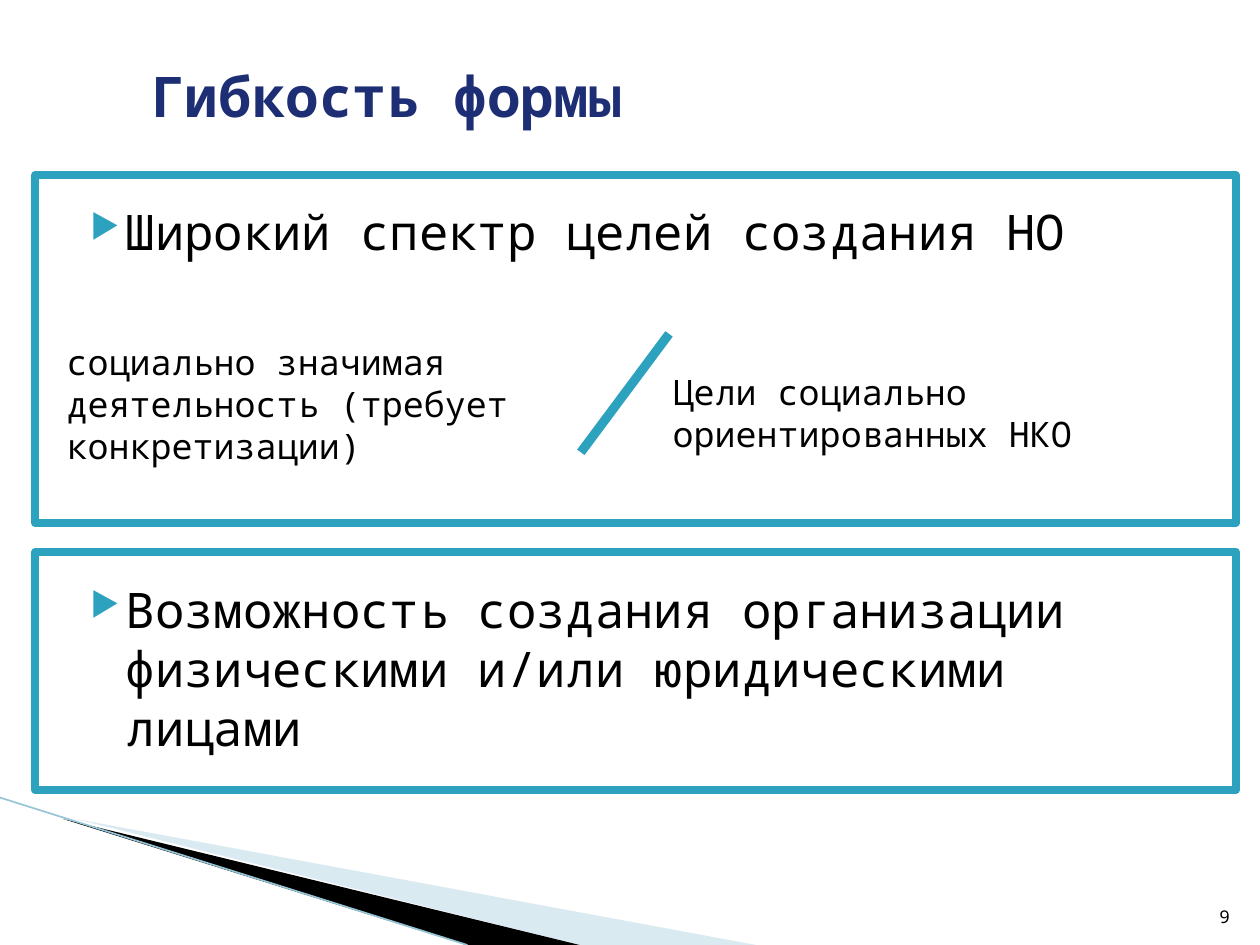
import dataclasses

import pptx
import pptx.dml.color
import pptx.enum.shapes
import pptx.enum.text
import pptx.oxml
import pptx.oxml.ns
import pptx.util

ANCHOR = pptx.enum.text.MSO_ANCHOR
ALIGN = pptx.enum.text.PP_ALIGN
CELL = pptx.util.Inches(0.1)  # grid of 100 columns by 75 rows
COLS, ROWS = 100, 75


@dataclasses.dataclass(frozen=True)
class Theme:
    font: str = "Noto Sans Mono"
    title: str = "1D2E75"
    text: str = "000000"
    paper: str = "FFFFFF"
    accent: str = "2DA2BF"
    pale: str = "A0CBDC"
    edge: str = "97C5D8"
    head: float = 32
    point: float = 28
    note: float = 20
    page: float = 10
    frame: float = 4.33
    slash: float = 5.25
    hair: float = 0.95


THEME = Theme()


def grid(*cells):
    return [round(cell * CELL) for cell in cells]


def inner(box, left, top, width, height):
    """Box in grid cells, offset from the corner of another."""
    return box[0] + left, box[1] + top, width, height


def color(code):
    return pptx.dml.color.RGBColor.from_string(code)


def node(parent, tag, **attrs):
    item = pptx.oxml.parse_xml(f"<a:{tag} {pptx.oxml.ns.nsdecls('a')}/>")
    for key, value in attrs.items():
        item.set(key, str(value))
    parent.append(item)
    return item


def write(frame, text, size, tone=THEME.text, bold=False, anchor=ANCHOR.TOP):
    frame.word_wrap = True
    frame.vertical_anchor = anchor
    para = frame.paragraphs[0]
    run = para.add_run()
    run.text = text
    run.font.name = THEME.font
    run.font.size = pptx.util.Pt(size)
    run.font.bold = bold
    run.font.color.rgb = color(tone)
    return para


def label(slide, box, text, size, **style):
    area = slide.shapes.add_textbox(*grid(*box))
    return write(area.text_frame, text, size, **style)


def indent(para, margin, first=0):
    props = para._p.get_or_add_pPr()
    props.set("marL", str(grid(margin)[0]))
    props.set("indent", str(grid(first)[0]))
    return props


def point(slide, box, text):
    props = indent(label(slide, box, text, THEME.point), 4, -2.8)
    tint = node(props, "buClr")
    node(tint, "srgbClr", val=THEME.accent)
    node(props, "buSzPct", val=68000)
    node(props, "buChar", char="▶")


def stroke(slide, start, end, tone, width):
    line = slide.shapes.add_connector(
        pptx.enum.shapes.MSO_CONNECTOR.STRAIGHT, *grid(*start, *end))
    line.line.color.rgb = color(tone)
    line.line.width = pptx.util.Pt(width)
    node(line._element.spPr, "effectLst")


def wedge(slide, dots, tone, alpha=None):
    pen = slide.shapes.build_freeform(*dots[0], scale=CELL)
    pen.add_line_segments(dots[1:], close=True)
    shape = pen.convert_to_shape()
    shape.shadow.inherit = False
    shape.line.fill.background()
    shape.fill.solid()
    shape.fill.fore_color.rgb = color(tone)
    if alpha:
        tint = shape._element.spPr.find(".//" + pptx.oxml.ns.qn("a:srgbClr"))
        node(tint, "alpha", val=alpha * 1000)


def panel(slide, box):
    shape = slide.shapes.add_shape(
        pptx.enum.shapes.MSO_SHAPE.RECTANGLE, *grid(*box))
    shape.shadow.inherit = False
    shape.fill.solid()
    shape.fill.fore_color.rgb = color(THEME.paper)
    shape.line.color.rgb = color(THEME.accent)
    shape.line.width = pptx.util.Pt(THEME.frame)


def corner(slide, box):
    """Sweeping wedges at the foot of the slide."""
    left, top, width, height = box
    right, foot = left + width, top + height
    wedge(slide, [(left + 5.5, top + 1.8), (right, foot),
                  (left + 45.6, foot), (left + 5.5, top + 1.7)],
          THEME.pale, alpha=40)
    wedge(slide, [(left + 5.3, top + 1.6), (left + 45.7, foot),
                  (left + 37.2, foot), (left + 5.4, top + 1.7)], THEME.text)
    stroke(slide, (left, top), (left + 37.1, foot), THEME.edge, THEME.hair)


def header(slide, box, text):
    title = slide.shapes.title
    title.left, title.top, title.width, title.height = grid(*box)
    para = write(title.text_frame, text, THEME.head, tone=THEME.title,
                 bold=True, anchor=ANCHOR.MIDDLE)
    para.alignment = ALIGN.LEFT
    indent(para, 9.8)


def goals(slide, box):
    """Upper panel: one point above two notes split by a slash."""
    panel(slide, box)
    point(slide, inner(box, 2.2, 1.6, 90, 7.1),
          "Широкий спектр целей создания НО")
    label(slide, inner(box, 1.5, 12.6, 46.5, 11.1),
          "социально значимая деятельность (требует конкретизации)",
          THEME.note)
    label(slide, inner(box, 49.6, 15, 45.7, 7.7),
          "Цели социально ориентированных НКО", THEME.note)
    low = inner(box, 43.3, 22, 0, 0)[:2]
    high = inner(box, 50.3, 12.6, 0, 0)[:2]
    stroke(slide, low, high, THEME.accent, THEME.slash)


def founders(slide, box):
    """Lower panel with a single point."""
    panel(slide, box)
    point(slide, inner(box, 2.2, 1.7, 90.6, 15.1),
          "Возможность создания организации физическими и/или "
          "юридическими лицами")


def footer(slide, box, text):
    para = label(slide, box, text, THEME.page, anchor=ANCHOR.BOTTOM)
    para.alignment = ALIGN.RIGHT


def main():
    deck = pptx.Presentation()
    deck.slide_width, deck.slide_height = grid(COLS, ROWS)
    slide = deck.slides.add_slide(deck.slide_layouts.get_by_name("Title Only"))
    corner(slide, (0, 63.3, 59.5, ROWS - 63.3))
    header(slide, (1.2, 1.3, 97.2, 12.5), "Гибкость формы")
    goals(slide, (2.8, 13.9, 95.3, 27.6))
    founders(slide, (2.8, 43.8, 95.3, 18.9))
    footer(slide, (94.6, 70.1, 4, 4), "9")
    deck.save("out.pptx")


if __name__ == "__main__":
    main()
